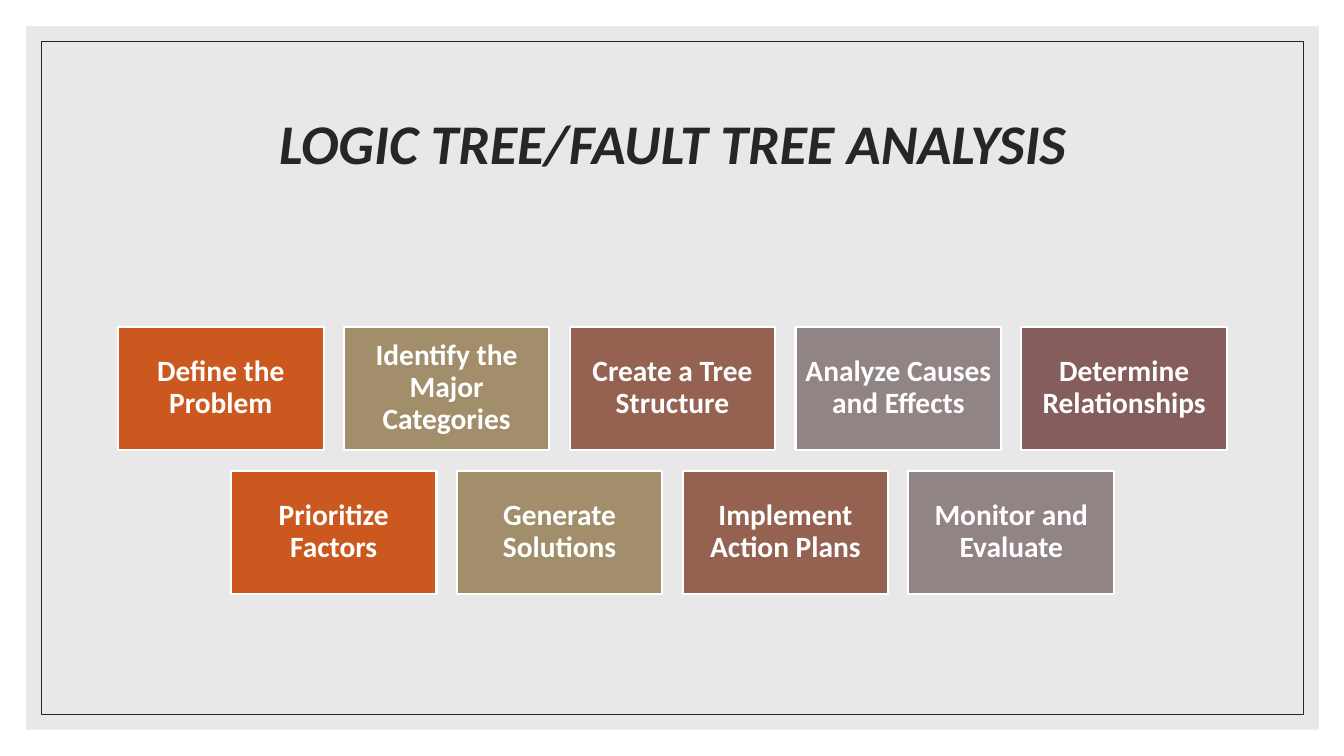
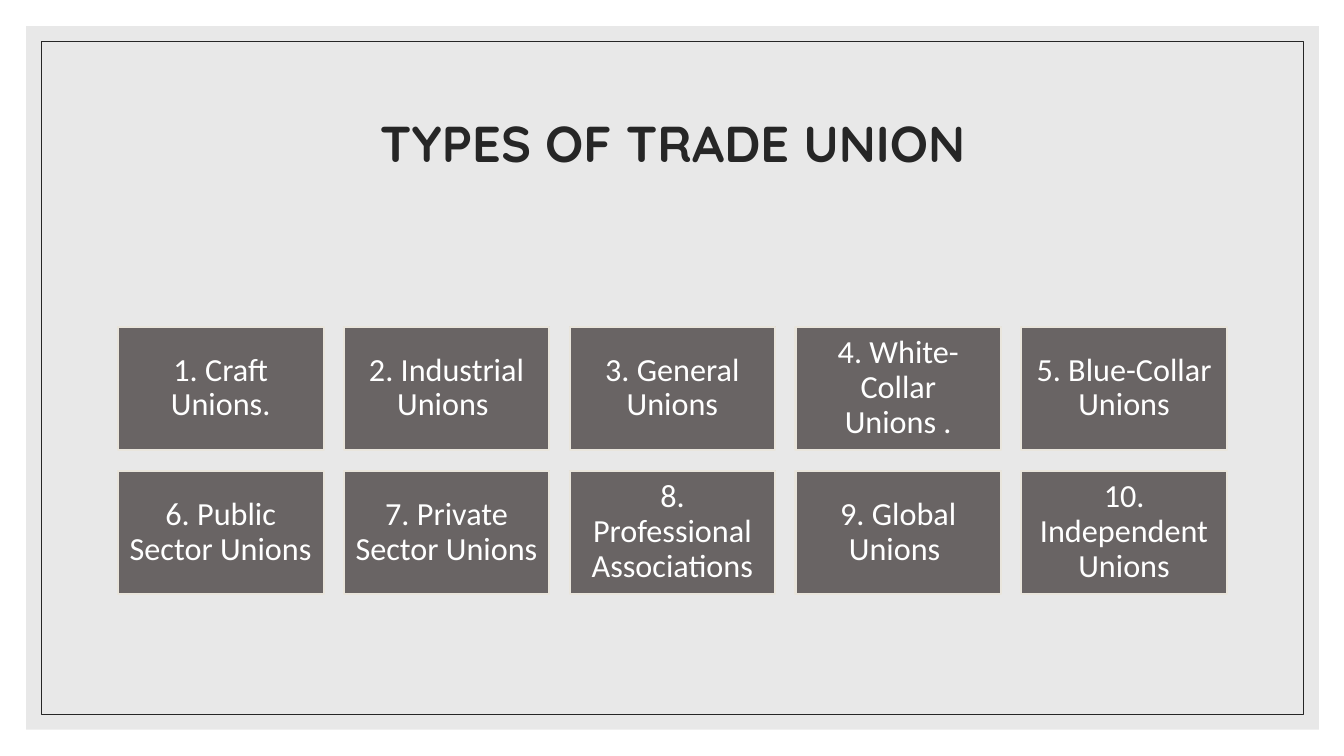
"""Build two slides of process and category tiles."""
import lxml.etree
import pptx
import pptx.dml.color
import pptx.enum.shapes
import pptx.enum.text
import pptx.oxml.ns
import pptx.util
from pptx.util import Inches

COLORS = {
    "white": "FFFFFF",
    "panel": "D9D9D9",
    "ink": "262626",
    "orange": "CB581F",
    "sand": "A28E6A",
    "brick": "956251",
    "taupe": "918485",
    "plum": "855D5D",
    "slate": "696464",
    "cream": "E9E5DC",
}
SLIDE_WIDTH, SLIDE_HEIGHT = 13.33, 7.5
TILE_WIDTH, TILE_HEIGHT = 2.04, 1.22
COLUMN_STEP, ROW_STEP = 2.24, 1.43
TILES_TOP = 3.24
COLUMNS = 5

LOGIC_STEPS = [
    "Define the Problem",
    "Identify the Major Categories",
    "Create a Tree Structure",
    "Analyze Causes and Effects",
    "Determine Relationships",
    "Prioritize Factors",
    "Generate Solutions",
    "Implement Action Plans",
    "Monitor and Evaluate",
]
UNION_TYPES = [
    "1. Craft Unions.",
    "2. Industrial Unions ",
    "3. General Unions",
    "4. White-Collar Unions .",
    "5. Blue-Collar Unions",
    "6. Public Sector Unions ",
    "7. Private Sector Unions",
    "8. Professional Associations",
    "9. Global Unions ",
    "10. Independent Unions",
]


def color(name):
    """Return the named colour."""
    return pptx.dml.color.RGBColor.from_string(COLORS[name])


def add_rectangle(slide, left, top, width, height, fill=None, line=None, weight=1.5):
    """Add a flat rectangle with an optional fill and outline."""
    shape = slide.shapes.add_shape(
        pptx.enum.shapes.MSO_SHAPE.RECTANGLE,
        Inches(left), Inches(top), Inches(width), Inches(height))
    shape.shadow.inherit = False
    if fill:
        shape.fill.solid()
        shape.fill.fore_color.rgb = color(fill)
    else:
        shape.fill.background()
    if line:
        shape.line.color.rgb = color(line)
        shape.line.width = pptx.util.Pt(weight)
    else:
        shape.line.fill.background()
    return shape


def set_opacity(shape, percent):
    """Make the solid fill of a shape partly transparent."""
    fill_color = shape.fill._xPr.find(".//" + pptx.oxml.ns.qn("a:srgbClr"))
    alpha = lxml.etree.SubElement(fill_color, pptx.oxml.ns.qn("a:alpha"))
    alpha.set("val", str(percent * 1000))


def write_text(shape, text, size, font="Calibri", ink="white",
               bold=False, italic=False, inset=None):
    """Write centred, wrapped text into a shape."""
    frame = shape.text_frame
    frame.word_wrap = True
    frame.vertical_anchor = pptx.enum.text.MSO_ANCHOR.MIDDLE
    if inset is not None:
        frame.margin_left = frame.margin_right = Inches(inset)
        frame.margin_top = frame.margin_bottom = Inches(inset)
    paragraph = frame.paragraphs[0]
    paragraph.alignment = pptx.enum.text.PP_ALIGN.CENTER
    paragraph.line_spacing = 0.9
    run = paragraph.add_run()
    run.text = text
    run.font.name = font
    run.font.size = pptx.util.Pt(size)
    run.font.bold = bold
    run.font.italic = italic
    run.font.color.rgb = color(ink)


def add_framed_slide(presentation, title, **title_format):
    """Add a slide with the shared panel, frame and title."""
    slide = presentation.slides.add_slide(presentation.slide_layouts[6])
    panel = add_rectangle(slide, 0.26, 0.26, 12.82, 6.98, fill="panel")
    set_opacity(panel, 60)
    add_rectangle(slide, 0.41, 0.41, 12.52, 6.68, line="ink", weight=0.5)
    title_box = slide.shapes.add_textbox(
        Inches(1.17), Inches(0.7), Inches(11), Inches(1.5))
    write_text(title_box, title, ink="ink", bold=True, **title_format)
    return slide


def add_tiles(slide, labels, fills, line, **text_format):
    """Lay out tiles in centred rows, cycling the fills."""
    for start in range(0, len(labels), COLUMNS):
        row_labels = labels[start:start + COLUMNS]
        row_width = (len(row_labels) - 1) * COLUMN_STEP + TILE_WIDTH
        row_left = (SLIDE_WIDTH - row_width) / 2 + 0.005
        top = TILES_TOP + start // COLUMNS * ROW_STEP
        for column, label in enumerate(row_labels):
            tile = add_rectangle(
                slide, row_left + column * COLUMN_STEP, top,
                TILE_WIDTH, TILE_HEIGHT,
                fill=fills[(start + column) % len(fills)], line=line)
            write_text(tile, label, **text_format)


def main():
    """Build and save the presentation."""
    presentation = pptx.Presentation()
    presentation.slide_width = Inches(SLIDE_WIDTH)
    presentation.slide_height = Inches(SLIDE_HEIGHT)

    logic_slide = add_framed_slide(
        presentation, "LOGIC TREE/FAULT TREE ANALYSIS", size=40, italic=True)
    add_tiles(logic_slide, LOGIC_STEPS,
              ["orange", "sand", "brick", "taupe", "plum"], "white",
              size=21, bold=True, inset=0.09)

    union_slide = add_framed_slide(
        presentation, "TYPES OF TRADE UNION", size=36, font="Quicksand")
    add_tiles(union_slide, UNION_TYPES, ["slate"], "cream", size=23, inset=0.1)

    presentation.save("out.pptx")


if __name__ == "__main__":
    main()
